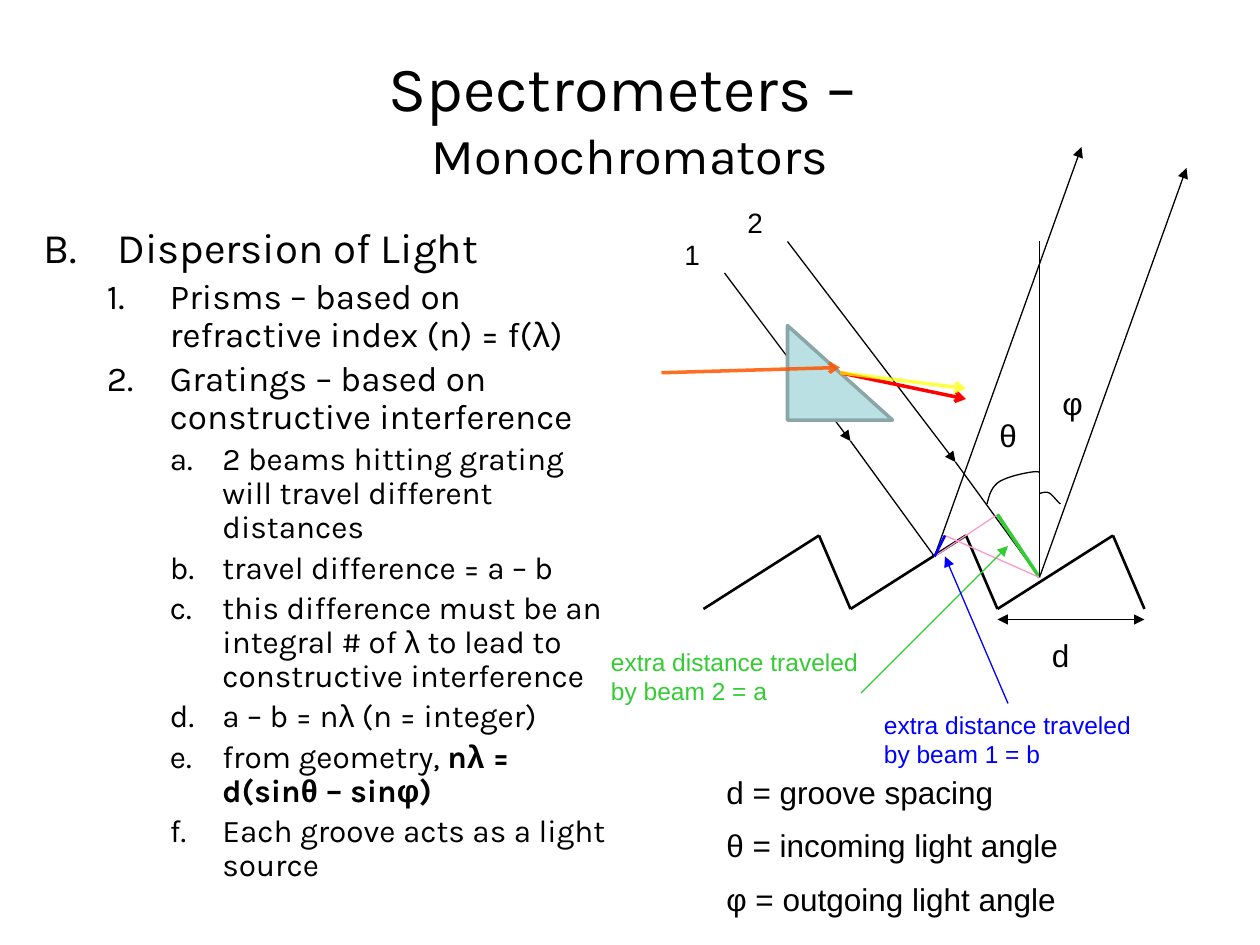
from itertools import groupby
from pptx import Presentation
from pptx.dml.color import RGBColor
from pptx.enum import shapes as sh, text as tx
from pptx.oxml.ns import qn
from pptx.util import Inches, Pt
from lxml import etree

# One grid cell is a twelfth of an inch: the slide is 120 columns by 90 rows.
CELL = Inches(1) / 12
COLS, ROWS = 120, 90
INK = {"black": "000000", "red": "FF0000", "yellow": "FFFF00", "blue": "0000FF",
       "green": "33CC33", "pink": "FF99CC", "glass": "BBE0E3", "edge": "8AA6A8"}
GREEK = "λθφ"


def cells(*nums):
    return [round(n * CELL) for n in nums]


def rgb(name):
    return RGBColor.from_string(INK[name])


def add(node, tag, **attrs):
    return etree.SubElement(node, qn(tag), attrs)


def style(run, size, font="Arial", ink="black", bold=False):
    run.font.size, run.font.name, run.font.bold = Pt(size), font, bold
    run.font.color.rgb = rgb(ink)


def frame(slide, box, grow=False):
    tf = slide.shapes.add_textbox(*cells(*box)).text_frame
    tf.word_wrap = True
    if grow:
        tf.auto_size = tx.MSO_AUTO_SIZE.SHAPE_TO_FIT_TEXT
    return tf


def label(slide, box, words, size, ink="black"):
    tf = frame(slide, box, True)
    tf.text = words
    for para in tf.paragraphs:
        para.space_before = Pt(size / 2)
        for run in para.runs:
            style(run, size, ink=ink)


def line(slide, org, a, b, ink="black", width=0.75, head=None, tail=None, alpha=None):
    """Straight line from a to b, both counted in cells from org."""
    x, y = org[:2]
    con = slide.shapes.add_connector(sh.MSO_CONNECTOR.STRAIGHT, *cells(
        x + a[0], y + a[1], x + b[0], y + b[1]))
    con.line.width = Pt(width)
    con.line.color.rgb = rgb(ink)
    ln = con.line._get_or_add_ln()
    if alpha:
        add(ln.find(".//" + qn("a:srgbClr")), "a:alpha", val=str(alpha * 1000))
    for tag, kind in (("a:headEnd", head), ("a:tailEnd", tail)):
        if kind:
            add(ln, tag, type=kind)
    add(con._element.spPr, "a:effectLst")


def curve(slide, org, start, *beziers):
    """Open outline through cubic segments, each sampled in eight steps."""
    pts = [start]
    for b, c, d in beziers:
        a = pts[-1]
        for t in (i / 8 for i in range(1, 9)):
            s = 1 - t
            pts.append(tuple(s**3 * p + 3 * s * s * t * q + 3 * s * t * t * r + t**3 * e
                             for p, q, r, e in zip(a, b, c, d)))
    pts = [cells(org[0] + x, org[1] + y) for x, y in pts]
    pen = slide.shapes.build_freeform(*pts[0])
    pen.add_line_segments(pts[1:], close=False)
    arc = pen.convert_to_shape()
    arc.shadow.inherit = False
    arc.fill.background()
    arc.line.color.rgb, arc.line.width = rgb("black"), Pt(0.75)


def title(slide, box):
    tf = frame(slide, box)
    tf.vertical_anchor = tx.MSO_ANCHOR.MIDDLE
    tf.text = "Spectrometers – \vMonochromators"
    para = tf.paragraphs[0]
    para.alignment = tx.PP_ALIGN.CENTER
    for run, size in zip(para.runs, (36, 28.8)):
        style(run, size, "Karla")


def outline(slide, box):
    # Per level: size, left margin and hang in cells, numbering
    kinds = [(24, 7, 7, None), (20, 12, 6, "arabicPeriod"), (18, 17, 5, "alphaLcPeriod")]
    # An asterisk starts the bold part
    items = [(0, "B.\tDispersion of Light"),
             (1, "Prisms – based on refractive index (n) = f(λ)"),
             (1, "Gratings – based on constructive interference"),
             (2, "2 beams hitting grating will travel different distances"),
             (2, "travel difference = a – b"),
             (2, "this difference must be an integral # of λ to lead to "
                 "constructive interference"),
             (2, "a – b = nλ (n = integer)"),
             (2, "from geometry, *nλ = d(sinθ – sinφ)"),
             (2, "Each groove acts as a light source")]
    tf = frame(slide, box)
    for i, (lvl, words) in enumerate(items):
        para = tf.paragraphs[0] if i == 0 else tf.add_paragraph()
        size, left, hang, num = kinds[lvl]
        para.level, para.line_spacing, para.space_before = lvl, 0.9, Pt(size * 0.2)
        ppr = para._p.get_or_add_pPr()
        ppr.set("marL", str(cells(left)[0]))
        ppr.set("indent", str(cells(-hang)[0]))
        if num:
            add(ppr, "a:buAutoNum", type=num)
        else:
            add(ppr, "a:buNone")
        for bold, part in enumerate(words.split("*")):
            for greek, chars in groupby(part, lambda c: c in GREEK):
                run = para.add_run()
                run.text = "".join(chars)
                style(run, size, "Arial" if greek else "Karla", bold=bool(bold))


def grating(slide, box):
    wide, deep = box[2:]
    pitch, rise = wide / 3, 11
    for i in range(3):
        x = i * pitch
        line(slide, box, (x, deep), (x + rise, 0), width=1.5)
        line(slide, box, (x + rise, 0), (x + pitch, deep), width=1.5)
    # Groove spacing
    line(slide, box, (2 * pitch, deep + 1), (wide, deep + 1), head="triangle", tail="triangle")
    label(slide, (box[0] + 32, box[1] + 9, 8, 4.8), "d", 18)


def beams(slide, box):
    hit1, hit2 = (20, 39), (30, 41)
    # Incoming beam in two parts, then outgoing beam
    for start, mid, hit, end in (((0, 12), (12, 28), hit1, (34, 0)),
                                 ((6, 9), (22, 30), hit2, (44, 2))):
        line(slide, box, start, mid, tail="triangle")
        line(slide, box, mid, hit)
        line(slide, box, hit, end, tail="triangle")
    # Path differences
    foot1, foot2 = (21, 37), (26, 35)
    line(slide, box, hit1, foot2, "pink")
    line(slide, box, foot2, hit2, "green", 2)
    line(slide, box, foot1, hit2, "pink")
    line(slide, box, hit1, foot1, "blue", 1.5)
    line(slide, box, (13, 52), (27, 38), "green", tail="triangle")
    line(slide, box, (27, 53), (21, 39), "blue", tail="triangle")
    # Surface normal and angle arcs
    line(slide, box, (30, 9), hit2)
    curve(slide, box, (25, 34), ((25.2, 33.3), (25.3, 32.6), (26, 32)),
          ((26.6, 31.5), (28.3, 31.1), (29, 31)), ((29.6, 30.9), (29.9, 30.9), (30, 31)))
    curve(slide, box, (30, 33), ((30.4, 32.9), (30.7, 32.8), (31, 33)),
          ((31.3, 33.2), (31.8, 33.9), (32, 34)))
    # Labels
    for x, y, w, h, words, size, ink in (
            (-5, 8, 5, 4.4, "1", 16, "black"), (1, 5, 5, 4.4, "2", 16, "black"),
            (25, 25, 4, 4.8, "θ", 18, "black"), (31, 22, 4, 4.8, "φ", 18, "black"),
            (-12, 47, 27, 6.8, "extra distance traveled by beam 2 = a", 14, "green"),
            (14, 53, 27, 6.8, "extra distance traveled by beam 1 = b", 14, "blue")):
        label(slide, (box[0] + x, box[1] + y, w, h), words, size, ink)


def prism(slide, box):
    glass = slide.shapes.add_shape(sh.MSO_SHAPE.RIGHT_TRIANGLE, *cells(*box))
    glass.shadow.inherit = False
    glass.fill.solid()
    glass.fill.fore_color.rgb = rgb("glass")
    glass.line.color.rgb, glass.line.width = rgb("edge"), Pt(2)
    # Mixed light in, split light out
    for a, b, ink, alpha in (((-12, 4.5), (5, 4), "yellow", 61),
                             ((-12, 4.5), (5, 4), "red", 57),
                             ((5, 4.5), (17, 7), "red", None),
                             ((5, 4.5), (17, 6), "yellow", 72)):
        line(slide, box, a, b, ink, 2, tail="arrow", alpha=alpha)


def main():
    prs = Presentation()
    prs.slide_width, prs.slide_height = cells(COLS, ROWS)
    slide = prs.slides.add_slide(prs.slide_layouts[6])
    title(slide, (6, 3.6, 108, 15))
    outline(slide, (3, 21, 56, 63))
    grating(slide, (67, 51, 42, 7))
    beams(slide, (69, 14, 44, 41))
    label(slide, (68, 73, 41, 15.6),
          "d = groove spacing\nθ = incoming light angle\nφ = outgoing light angle", 18)
    prism(slide, (75, 31, 10, 9))
    prs.save("out.pptx")


if __name__ == "__main__":
    main()
